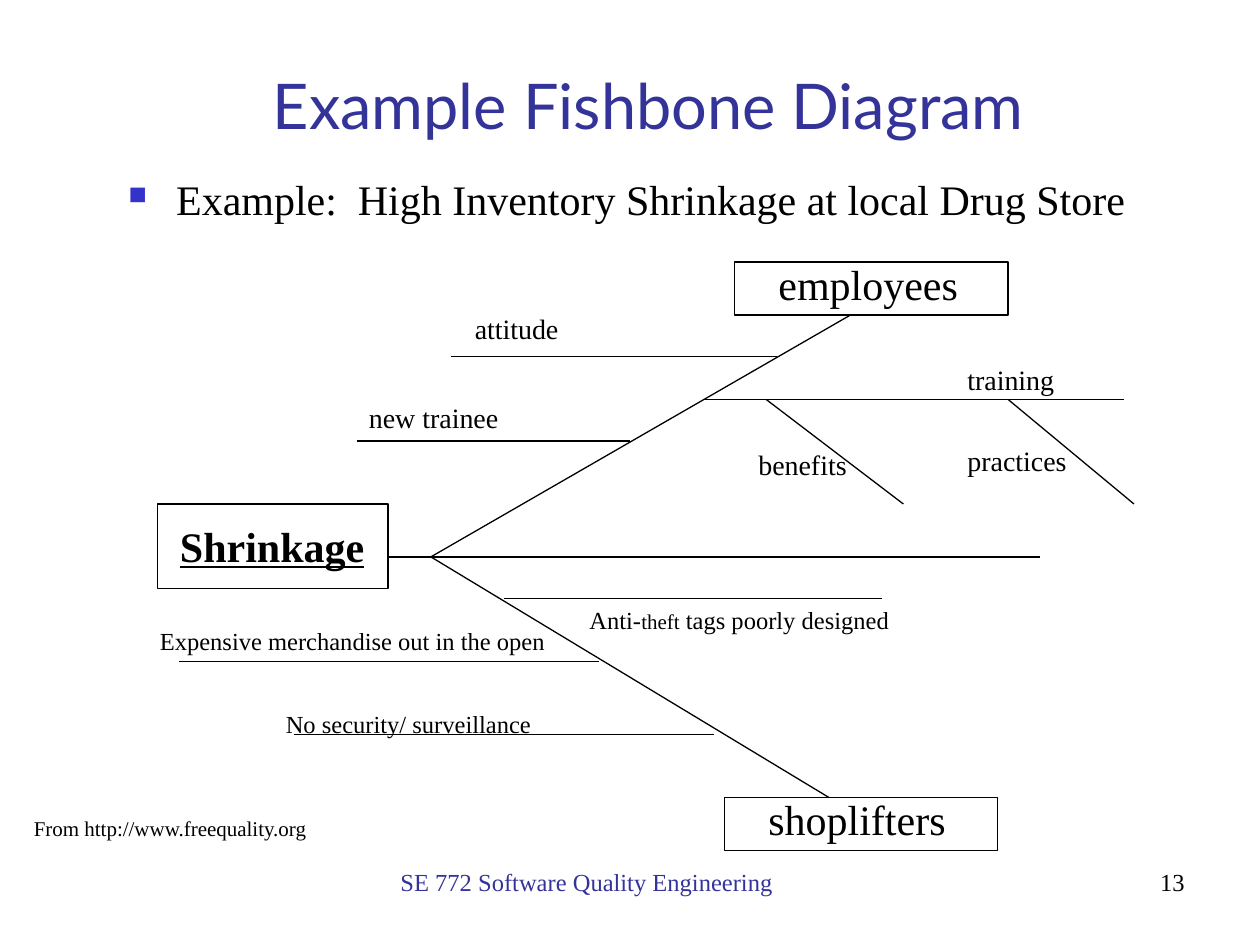
"""Builds a fishbone diagram slide on inventory shrinkage."""
import pptx
import pptx.dml.color
import pptx.enum.shapes
import pptx.enum.text
import pptx.oxml.ns
import pptx.util
from lxml import etree

Inches = pptx.util.Inches
Pt = pptx.util.Pt
Color = pptx.dml.color.RGBColor
Align = pptx.enum.text.PP_ALIGN
Anchor = pptx.enum.text.MSO_ANCHOR
BLACK = Color(0, 0, 0)
NAVY = Color(0x33, 0x33, 0x99)
BLUE = Color(0x33, 0x33, 0xCC)
SERIF = "Times New Roman"
NECK = (3.42, 4.42)

BOXES = [
    (1.25, 4, 1.83, 0.67),
    (5.75, 6.33, 2.17, 0.42),
    (5.83, 2.08, 2.17, 0.42),
]
BONES = [
    ((3.08, 4.42), (8.25, 4.42)),
    (NECK, (6.58, 6.33)),
    (NECK, (6.75, 2.5)),
    ((4.75, 5.25), (1.42, 5.25)),
    ((7, 4.75), (4, 4.75)),
    ((2.33, 5.83), (5.67, 5.83)),
    ((3.58, 2.83), (6.17, 2.83)),
    ((2.83, 3.5), (5, 3.5)),
    ((8.92, 3.17), (5.58, 3.17)),
    ((6.08, 3.17), (7.17, 4)),
    ((8, 3.17), (9, 4)),
]
HEADS = [
    ("shoplifters", (6, 6.25, 2.17, 0.5)),
    ("employees", (6.08, 2, 2.17, 0.5)),
]
STAFF = [
    ("attitude", (3.67, 2.42, 1.33, 0.37)),
    ("new trainee", (2.83, 3.13, 1.33, 0.37)),
    ("training", (7.58, 2.83, 1.33, 0.37)),
    ("benefits", (5.92, 3.5, 1.25, 0.37)),
    ("practices", (7.58, 3.47, 1.25, 0.37)),
]
THEFT = [
    ([("Anti-", 14), ("theft", 12), (" tags poorly designed", 14)],
     (4.58, 4.75, 4, 0.33)),
    ("Expensive merchandise out in the open", (1.17, 4.92, 3.42, 0.33)),
    ("No security/ surveillance", (2.17, 5.58, 3.17, 0.68)),
]


def add_text(slide, text, place, size=14, color=BLACK, face=SERIF, bold=False,
             line=False, align=Align.LEFT, anchor=Anchor.TOP, wrap=True):
    """Add a text box; text is a string or a list of (string, size) runs."""
    shape = slide.shapes.add_textbox(*map(Inches, place))
    frame = shape.text_frame
    frame.word_wrap = wrap
    frame.vertical_anchor = anchor
    para = frame.paragraphs[0]
    para.alignment = align
    for part, points in [(text, size)] if isinstance(text, str) else text:
        run = para.add_run()
        run.text = part
        font = run.font
        font.name, font.size = face, Pt(points)
        font.bold, font.underline = bold, line
        font.color.rgb = color
    return para


def add_bullet(para, mark, color, scale, indent):
    """Give a paragraph a coloured bullet with a hanging indent."""
    props = para._p.get_or_add_pPr()
    props.set("marL", str(Inches(indent)))
    props.set("indent", str(-Inches(indent)))
    tag = pptx.oxml.ns.qn
    tint = etree.SubElement(props, tag("a:buClr"))
    etree.SubElement(tint, tag("a:srgbClr"), val=str(color))
    etree.SubElement(props, tag("a:buSzPct"), val=str(scale * 1000))
    etree.SubElement(props, tag("a:buChar"), char=mark)


def add_box(slide, place):
    """Add an unfilled rectangle with a thin outline."""
    kind = pptx.enum.shapes.MSO_SHAPE.RECTANGLE
    box = slide.shapes.add_shape(kind, *map(Inches, place))
    box.shadow.inherit = False
    box.fill.background()
    box.line.color.rgb = BLACK
    box.line.width = Pt(0.75)


def add_bone(slide, start, end):
    """Add a thin straight line between two points."""
    kind = pptx.enum.shapes.MSO_CONNECTOR.STRAIGHT
    bone = slide.shapes.add_connector(kind, *map(Inches, start + end))
    bone.line.color.rgb = BLACK
    bone.line.width = Pt(0.75)
    etree.SubElement(bone._element.spPr, pptx.oxml.ns.qn("a:effectLst"))


def main():
    """Build and save the slide."""
    deck = pptx.Presentation()
    deck.slide_width, deck.slide_height = Inches(10), Inches(7.5)
    slide = deck.slides.add_slide(deck.slide_layouts[6])

    add_text(slide, "SE 772 Software Quality Engineering",
             (3.08, 6.83, 3.18, 0.34), color=NAVY, wrap=False)
    add_text(slide, "Example Fishbone Diagram", (0.92, 0.25, 8.45, 0.93),
             size=36, color=NAVY, face="Lato", align=Align.CENTER,
             anchor=Anchor.BOTTOM)
    para = add_text(slide,
                    "Example:  High Inventory Shrinkage at local Drug Store",
                    (0.92, 1.33, 8.5, 4.75), size=24)
    add_bullet(para, "■", BLUE, 60, 0.38)
    add_text(slide, "13", (7.17, 6.83, 2.33, 0.52), align=Align.RIGHT)

    for place in BOXES:
        add_box(slide, place)
    for start, end in BONES:
        add_bone(slide, start, end)

    add_text(slide, "Shrinkage", (1.33, 4.08, 2.08, 0.5), size=24, bold=True,
             line=True)
    for group, size in ((HEADS, 24), (STAFF, 16), (THEFT, 14)):
        for text, place in group:
            add_text(slide, text, place, size=size)
    add_text(slide, "From http://www.freequality.org", (0.17, 6.42, 2.4, 0.3),
             size=12, wrap=False)
    deck.save("out.pptx")


if __name__ == "__main__":
    main()
